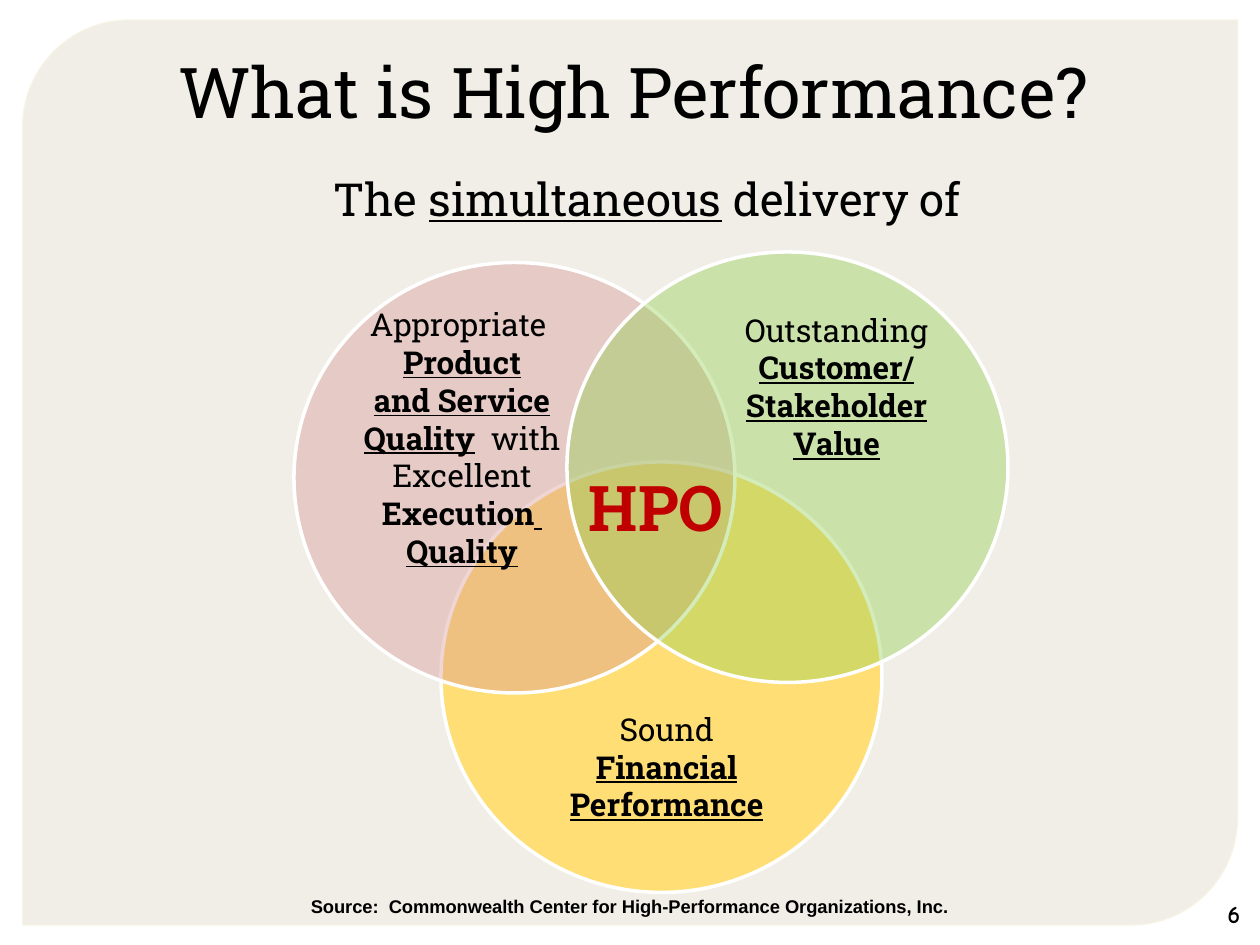
"""Build a slide that explains high performance with three overlapping circles."""
from lxml import etree
from pptx import Presentation
from pptx.dml.color import RGBColor
from pptx.enum.shapes import MSO_SHAPE
from pptx.enum.text import MSO_ANCHOR, PP_ALIGN
from pptx.oxml.ns import qn
from pptx.util import Pt

CENTER = PP_ALIGN.CENTER
TOP, MIDDLE = MSO_ANCHOR.TOP, MSO_ANCHOR.MIDDLE
OVAL, RECTANGLE = MSO_SHAPE.OVAL, MSO_SHAPE.RECTANGLE
PANEL = MSO_SHAPE.ROUND_2_DIAG_RECTANGLE

BLACK = RGBColor(0x00, 0x00, 0x00)
WHITE = RGBColor(0xFF, 0xFF, 0xFF)
RED = RGBColor(0xC0, 0x00, 0x00)
SAND = RGBColor(0xE8, 0xE6, 0xD9)
CREAM = RGBColor(0xF6, 0xF3, 0xE4)
YELLOW = RGBColor(0xFF, 0xDE, 0x75)
ROSE = RGBColor(0xD9, 0x96, 0x94)
GREEN = RGBColor(0x92, 0xD0, 0x50)

KEY = {"bold": True, "underline": True}


def span(text, **style):
    """Return a piece of text with its format."""
    return text, style


def set_opacity(parent, percent):
    """Make the solid fill inside an element partly transparent."""
    color = parent.find(qn("a:solidFill"))[0]
    etree.SubElement(color, qn("a:alpha"), val=str(percent * 1000))


class SlideBuilder:
    """Holds the text style and the current slide."""

    font = "Roboto Slab"
    size = 18

    def __init__(self, slide):
        self.slide = slide

    def shape(self, kind, place, fill, opacity=100, line=None, width=2, line_opacity=100):
        """Add a filled preset shape."""
        shape = self.slide.shapes.add_shape(kind, *map(Pt, place))
        shape.shadow.inherit = False
        shape.fill.solid()
        shape.fill.fore_color.rgb = fill
        properties = shape.element.spPr
        if opacity < 100:
            set_opacity(properties, opacity)
        if line is None:
            shape.line.fill.background()
        else:
            shape.line.color.rgb = line
            shape.line.width = Pt(width)
            if line_opacity < 100:
                set_opacity(properties.find(qn("a:ln")), line_opacity)
        return shape

    def fill_text(self, box, paragraphs, anchor=TOP, wrap=True, inset=3.6, spacing=None,
                  indents=None, **style):
        """Fill a box with centred paragraphs of spans."""
        frame = box.text_frame
        frame.word_wrap = wrap
        frame.vertical_anchor = anchor
        frame.margin_top = Pt(inset)
        for index, spans in enumerate(paragraphs):
            para = frame.add_paragraph() if index else frame.paragraphs[0]
            para.alignment = CENTER
            if spacing:
                para.line_spacing = spacing
            if indents and index in indents:
                para._p.get_or_add_pPr().set("indent", str(Pt(indents[index])))
            for text, own in spans:
                self.run(para, text, **{**style, **own})

    def run(self, para, text, size=None, font=None, color=BLACK, bold=False, underline=False):
        """Add one formatted run to a paragraph."""
        run = para.add_run()
        run.text = text
        run.font.size = Pt(size or self.size)
        run.font.name = font or self.font
        run.font.color.rgb = color
        run.font.bold = bold
        run.font.underline = underline

    def text(self, place, paragraphs, **options):
        """Add a text box."""
        box = self.slide.shapes.add_textbox(*map(Pt, place))
        self.fill_text(box, paragraphs, **options)


def main():
    """Build and save the deck."""
    deck = Presentation()
    deck.slide_width, deck.slide_height = Pt(720), Pt(540)
    page = SlideBuilder(deck.slides.add_slide(deck.slide_layouts[6]))

    panel = page.shape(PANEL, (13, 11.5, 694, 517), SAND, 65, CREAM, 0.87, 88)
    panel.adjustments[0] = 0.118
    panel.adjustments[1] = 0

    for left, top, color, opacity in (
        (252, 264, YELLOW, 100), (168, 150, ROSE, 40), (324, 144, GREEN, 40),
    ):
        page.shape(OVAL, (left, top, 252, 246), color, opacity, WHITE)

    page.text((162, 170, 204, 160), [
        [span("Appropriate ")],
        [span("Product", **KEY)],
        [span("and Service", **KEY)],
        [span("Quality", **KEY), span("  with")],
        [span("Excellent")],
        [span("Execution", bold=True), span(" ", **KEY)],
        [span("Quality", **KEY)],
    ], anchor=MIDDLE, indents={4: -23})
    page.text((396, 174, 164, 94), [
        [span("Outstanding")],
        [span("Customer/", **KEY)],
        [span("Stakeholder", **KEY)],
        [span("Value", **KEY)],
    ])
    page.text((306, 402, 150, 73), [
        [span("Sound")],
        [span("Financial", **KEY)],
        [span("Performance", **KEY)],
    ])
    page.text((318, 264, 114, 51), [[span("HPO")]], size=36, color=RED, bold=True)

    page.text((0, 72, 720, 58), [
        [span("The "), span("simultaneous", underline=True), span(" delivery of")],
    ], size=26, spacing=1.5, inset=10, indents={0: 20})
    page.text((0, 24, 720, 102), [[span("What is High Performance?")]],
              size=40, indents={0: 4})
    page.text((168, 508, 384, 20), [
        [span("Source:  Commonwealth Center for High-Performance Organizations, Inc.")],
    ], wrap=False, size=10.5, font="Arial", bold=True)

    number = page.shape(RECTANGLE, (690, 510, 30, 24), WHITE)
    page.fill_text(number, [[span("6")]], anchor=MIDDLE, size=14, font="Comic Neue", bold=True)

    deck.save("out.pptx")


if __name__ == "__main__":
    main()
